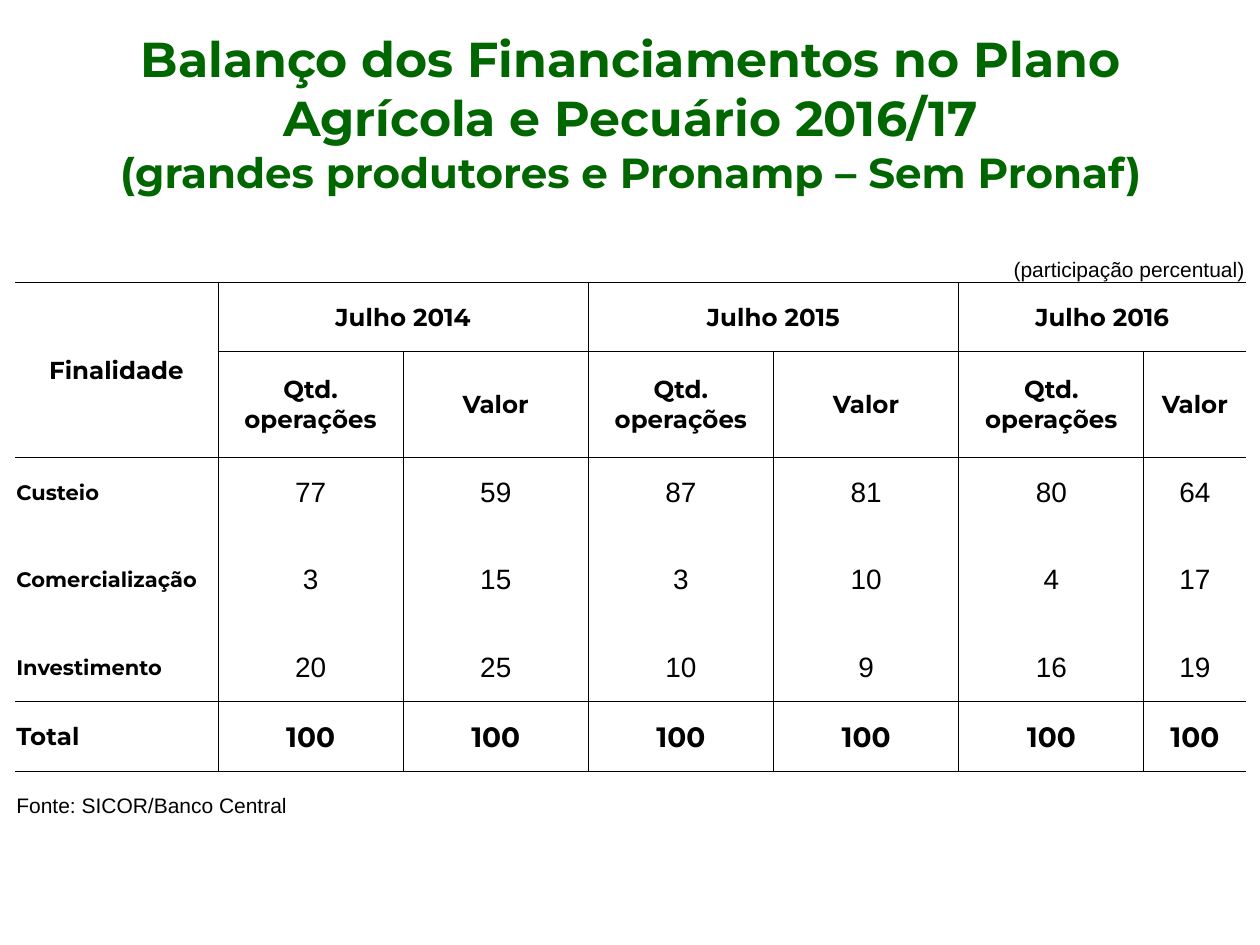
from lxml import etree
from pptx import Presentation
from pptx.dml.color import RGBColor
from pptx.enum import text
from pptx.oxml import ns
from pptx.util import Inches, Pt

COLORS = {"title": "006600", "ink": "000000"}
HEADING, PLAIN = "Montserrat", "Arial"
LEFT, CENTER, RIGHT = text.PP_ALIGN.LEFT, text.PP_ALIGN.CENTER, text.PP_ALIGN.RIGHT

COLUMN_WIDTHS = [1.61] + [1.47] * 5 + [0.81]
ROW_HEIGHTS = [0.38, 0.55, 0.84, 0.55, 0.84, 0.55, 0.55, 0.55]
RULED_ROWS = {1, 2, 3, 6, 7}  # rows with a line along their top edge
GRID_ROWS = range(1, 7)  # rows with lines between the columns

PERIODS = ["Julho 2014", "Julho 2015", "Julho 2016"]
SHARES = [
    ("Custeio", [77, 59, 87, 81, 80, 64]),
    ("Comercialização", [3, 15, 3, 10, 4, 17]),
    ("Investimento", [20, 25, 10, 9, 16, 19]),
]


def add_span(para, words, *, size, font=HEADING, bold=True, color="ink"):
    span = para.add_run()
    span.text = words
    span.font.name = font
    span.font.size = Pt(size)
    span.font.bold = bold
    span.font.color.rgb = RGBColor.from_string(COLORS[color])


def fill_title(page, left, top, width, height):
    box = page.shapes.title
    box.left, box.top = Inches(left), Inches(top)
    box.width, box.height = Inches(width), Inches(height)
    frame = box.text_frame
    frame.word_wrap = True
    frame.auto_size = text.MSO_AUTO_SIZE.NONE
    frame.vertical_anchor = text.MSO_ANCHOR.MIDDLE
    para = frame.paragraphs[0]
    para.alignment = CENTER
    add_span(para, "Balanço dos Financiamentos no Plano Agrícola e Pecuário 2016/17",
             size=28, color="title")
    para.add_line_break()
    add_span(para, "(grandes produtores e Pronamp – Sem Pronaf)", size=24, color="title")


def write_cell(cell, words, *, align=CENTER, anchor=text.MSO_ANCHOR.MIDDLE, **style):
    cell.vertical_anchor = anchor
    para = cell.text_frame.paragraphs[0]
    para.alignment = align
    add_span(para, words, **style)


def set_borders(cell, sides):
    """Draw a thin line on the sides marked true and none on the others."""
    properties = cell._tc.get_or_add_tcPr()
    for index, (side, drawn) in enumerate(sides.items()):
        line = etree.Element(ns.qn(f"a:ln{side}"), w=str(Pt(0.5)))
        if drawn:
            fill = etree.SubElement(line, ns.qn("a:solidFill"))
            etree.SubElement(fill, ns.qn("a:srgbClr"), val=COLORS["ink"])
        else:
            etree.SubElement(line, ns.qn("a:noFill"))
        properties.insert(index, line)


def format_cells(table):
    for row in range(len(ROW_HEIGHTS)):
        for column in range(len(COLUMN_WIDTHS)):
            cell = table.cell(row, column)
            cell.fill.background()
            cell.margin_left = cell.margin_right = cell.margin_top = Inches(0.01)
            cell.margin_bottom = 0
            if cell.is_spanned:
                continue
            below = row + (cell.span_height if cell.is_merge_origin else 1)
            after = column + (cell.span_width if cell.is_merge_origin else 1)
            set_borders(cell, {
                "L": row in GRID_ROWS and column > 0,
                "R": row in GRID_ROWS and after < len(COLUMN_WIDTHS),
                "T": row in RULED_ROWS,
                "B": below in RULED_ROWS,
            })


def write_header(table):
    table.cell(0, 5).merge(table.cell(0, 6))
    write_cell(table.cell(0, 5), "(participação percentual)", align=RIGHT,
               anchor=text.MSO_ANCHOR.BOTTOM, size=12, font=PLAIN, bold=False)
    table.cell(1, 0).merge(table.cell(2, 0))
    write_cell(table.cell(1, 0), "Finalidade", size=14)
    for index, period in enumerate(PERIODS):
        column = 1 + 2 * index
        table.cell(1, column).merge(table.cell(1, column + 1))
        write_cell(table.cell(1, column), period, size=14)
        write_cell(table.cell(2, column), "Qtd. operações", size=14)
        write_cell(table.cell(2, column + 1), "Valor", size=14)


def write_body(table):
    for row, (purpose, values) in enumerate(SHARES, start=3):
        write_cell(table.cell(row, 0), purpose, align=LEFT, size=12)
        for column, value in enumerate(values, start=1):
            write_cell(table.cell(row, column), str(value), size=16, font=PLAIN, bold=False)
    write_cell(table.cell(6, 0), "Total", align=LEFT, size=14)
    for column in range(1, len(COLUMN_WIDTHS)):
        write_cell(table.cell(6, column), "100", size=16)
    table.cell(7, 0).merge(table.cell(7, 1))
    write_cell(table.cell(7, 0), "Fonte: SICOR/Banco Central", align=LEFT,
               size=12, font=PLAIN, bold=False)


def add_share_table(page, left, top):
    table = page.shapes.add_table(
        len(ROW_HEIGHTS), len(COLUMN_WIDTHS), Inches(left), Inches(top),
        Inches(sum(COLUMN_WIDTHS)), Inches(sum(ROW_HEIGHTS))).table
    table.first_row = table.horz_banding = False
    for column, width in zip(table.columns, COLUMN_WIDTHS):
        column.width = Inches(width)
    for row, height in zip(table.rows, ROW_HEIGHTS):
        row.height = Inches(height)
    write_header(table)
    write_body(table)
    format_cells(table)


def main():
    deck = Presentation()
    deck.slide_width, deck.slide_height = Inches(10), Inches(7.5)
    page = deck.slides.add_slide(deck.slide_layouts.get_by_name("Title Only"))
    add_share_table(page, 0.12, 1.86)
    fill_title(page, 0.51, 0.29, 8.99, 1.21)
    deck.save("out.pptx")


if __name__ == "__main__":
    main()
